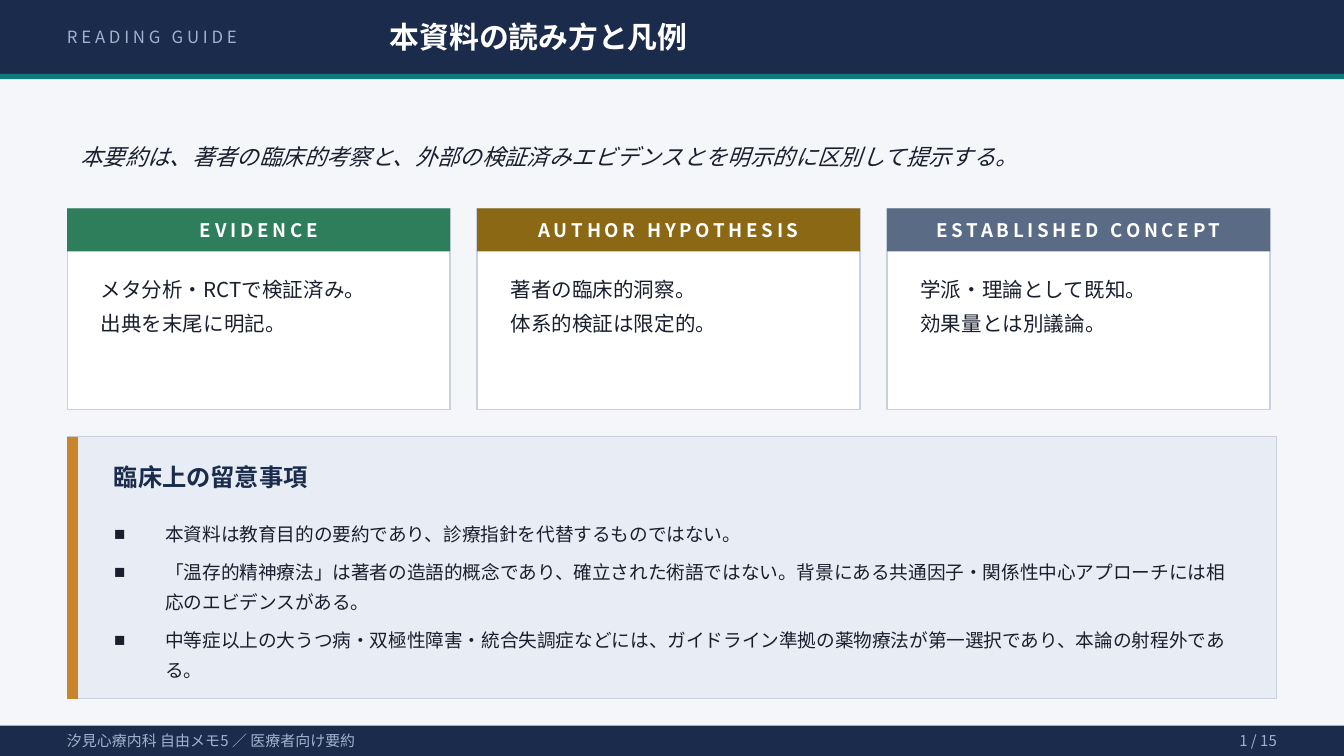
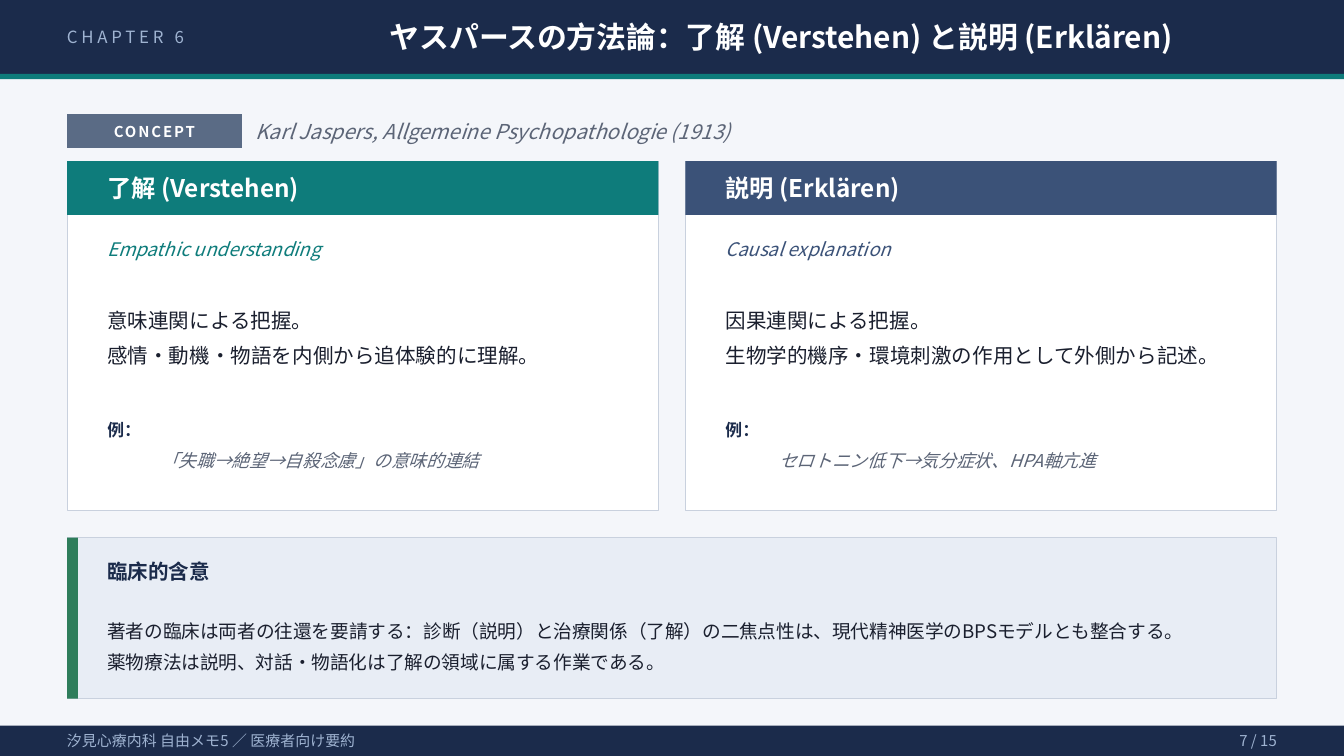
from lxml import etree
from pptx import Presentation
from pptx.dml.color import RGBColor
from pptx.enum import shapes, text
from pptx.oxml import ns
from pptx.util import Pt

FONT = "Noto Sans CJK JP"
COLORS = {
    "page": "F4F6FA", "navy": "1B2B4B", "teal": "0E7C7B", "pale": "9FB3D1",
    "white": "FFFFFF", "ink": "1A1F2E", "muted": "5C6577", "border": "C9D1DE",
    "panel": "E8EDF5", "green": "2E7D5B", "gold": "8B6914", "slate": "5A6B85",
    "amber": "C8852C", "indigo": "3B5278",
}
PAGE_WIDTH, PAGE_HEIGHT = 720, 405
MARGIN, GAP = 36, 14.4
CONTENT_WIDTH = PAGE_WIDTH - 2 * MARGIN
FOOTER = "汐見心療内科 自由メモ5 ／ 医療者向け要約"
PAGE_COUNT = 15
LEFT, CENTER, RIGHT = text.PP_ALIGN.LEFT, text.PP_ALIGN.CENTER, text.PP_ALIGN.RIGHT
TOP, MIDDLE = text.MSO_ANCHOR.TOP, text.MSO_ANCHOR.MIDDLE


def rgb(name):
    return RGBColor.from_string(COLORS[name])


def add_bullet(paragraph, indent):
    properties = paragraph._p.get_or_add_pPr()
    properties.set("marL", str(Pt(indent)))
    properties.set("indent", str(-Pt(indent)))
    etree.SubElement(properties, ns.qn("a:buChar")).set("char", "■")


def write(frame, content, size, color, bold=False, italic=False, align=LEFT, anchor=MIDDLE,
          leading=1.0, after=0, tracking=0, inset=(7.2, 3.6), bullet_indent=0):
    frame.text = content
    frame.word_wrap = True
    frame.auto_size = text.MSO_AUTO_SIZE.NONE
    frame.vertical_anchor = anchor
    frame.margin_left = frame.margin_right = Pt(inset[0])
    frame.margin_top = frame.margin_bottom = Pt(inset[1])
    for paragraph in frame.paragraphs:
        if bullet_indent:
            add_bullet(paragraph, bullet_indent)
        paragraph.alignment = align
        paragraph.line_spacing = leading
        paragraph.space_before = Pt(0)
        paragraph.space_after = Pt(after)
        for run in paragraph.runs:
            font = run.font
            font.size, font.bold, font.italic = Pt(size), bold, italic
            font.color.rgb = rgb(color)
            font.name = FONT
            properties = run._r.get_or_add_rPr()
            etree.SubElement(properties, ns.qn("a:ea")).set("typeface", FONT)
            if tracking:
                properties.set("spc", str(tracking * 100))


def add_text(slide, box, content, size, color, **style):
    label = slide.shapes.add_textbox(*map(Pt, box))
    write(label.text_frame, content, size, color, **style)


def add_rect(slide, box, fill, border_width=0):
    rect = slide.shapes.add_shape(shapes.MSO_SHAPE.RECTANGLE, *map(Pt, box))
    rect.shadow.inherit = False
    rect.fill.solid()
    rect.fill.fore_color.rgb = rgb(fill)
    if border_width:
        rect.line.color.rgb = rgb("border")
        rect.line.width = Pt(border_width)
    else:
        rect.line.fill.background()
    return rect


def fill_placeholder(placeholder, box, content, size, color, **style):
    placeholder.left, placeholder.top, placeholder.width, placeholder.height = map(Pt, box)
    placeholder.element.getparent().append(placeholder.element)
    write(placeholder.text_frame, content, size, color, **style)


def add_frame(slide, section, title, page):
    add_rect(slide, (0, 0, PAGE_WIDTH, 39.6), "navy")
    add_rect(slide, (0, 39.6, PAGE_WIDTH, 2.88), "teal")
    add_text(slide, (28.8, 3.6, 180, 32.4), section, 9, "pale", tracking=2)
    fill_placeholder(slide.shapes.title, (208.8, 3.6, 496.8, 32.4), title, 16, "white",
                     bold=True, inset=(0, 0))
    height = 16.2
    top = PAGE_HEIGHT - height
    add_rect(slide, (0, top, PAGE_WIDTH, height), "navy")
    add_text(slide, (28.8, top, 432, height), FOOTER, 8, "pale")
    add_text(slide, (633.6, top, 57.6, height), f"{page} / {PAGE_COUNT}", 8, "pale", align=RIGHT)


def add_legend_card(slide, box, category, color, meaning):
    left, top, width, height = box
    add_rect(slide, box, "white", 0.75)
    header = add_rect(slide, (left, top, width, 23.04), color)
    write(header.text_frame, category, 10, "white", bold=True, align=CENTER, tracking=2)
    add_text(slide, (left + 10.8, top + 28.8, width - 21.6, height - 32.4), meaning, 11, "ink",
             anchor=TOP, leading=1.35)


def add_comparison_card(slide, box, term, color, gloss, meaning, example):
    left, top, width, _ = box
    inner_left, inner_width = left + 14.4, width - 28.8
    add_rect(slide, box, "white", 0.5)
    header = add_rect(slide, (left, top, width, 28.8), color)
    write(header.text_frame, term, 13, "white", bold=True, inset=(21.6, 3.6))
    add_text(slide, (inner_left, top + 36, inner_width, 21.6), gloss, 10, color, italic=True)
    add_text(slide, (inner_left, top + 57.6, inner_width, 68.4), meaning, 11, "ink", leading=1.4)
    add_text(slide, (inner_left, top + 133.2, 36, 21.6), "例：", 9, "navy", bold=True)
    add_text(slide, (inner_left + 28.8, top + 133.2, inner_width - 28.8, 50.4), example, 9.5,
             "muted", italic=True, leading=1.3)


def add_panel(slide, box, accent, heading, size, indent, heading_height):
    left, top, _, height = box
    add_rect(slide, box, "panel", 0.5)
    add_rect(slide, (left, top, 5.76, height), accent)
    add_text(slide, (left + indent, top + 7.2, 612, heading_height), heading, size, "navy",
             bold=True)


def build_reading_guide(prs):
    slide = prs.slides.add_slide(prs.slide_layouts[1])
    notes = slide.placeholders[1]
    add_frame(slide, "READING GUIDE", "本資料の読み方と凡例", 1)
    add_text(slide, (MARGIN, 61.2, CONTENT_WIDTH, 39.6),
             "本要約は、著者の臨床的考察と、外部の検証済みエビデンスとを明示的に区別して提示する。",
             12, "ink", italic=True, leading=1.4)
    legend = [
        ("EVIDENCE", "green", "メタ分析・RCTで検証済み。\n出典を末尾に明記。"),
        ("AUTHOR HYPOTHESIS", "gold", "著者の臨床的洞察。\n体系的検証は限定的。"),
        ("ESTABLISHED CONCEPT", "slate", "学派・理論として既知。\n効果量とは別議論。"),
    ]
    card_width = 205.2
    for index, entry in enumerate(legend):
        left = MARGIN + index * (card_width + GAP)
        add_legend_card(slide, (left, 111.6, card_width, 108), *entry)
    add_panel(slide, (MARGIN, 234, CONTENT_WIDTH, 140.4), "amber", "臨床上の留意事項", 13, 18, 28.8)
    cautions = [
        "本資料は教育目的の要約であり、診療指針を代替するものではない。",
        "「温存的精神療法」は著者の造語的概念であり、確立された術語ではない。"
        "背景にある共通因子・関係性中心アプローチには相応のエビデンスがある。",
        "中等症以上の大うつ病・双極性障害・統合失調症などには、"
        "ガイドライン準拠の薬物療法が第一選択であり、本論の射程外である。",
    ]
    fill_placeholder(notes, (MARGIN + 18, 270, 615.6, 100.8), "\n".join(cautions), 10, "ink",
                     leading=1.35, after=4, bullet_indent=27.36)


def build_jaspers(prs):
    slide = prs.slides.add_slide(prs.slide_layouts[5])
    add_frame(slide, "CHAPTER 6", "ヤスパースの方法論：了解 (Verstehen) と説明 (Erklären)", 7)
    tag = add_rect(slide, (MARGIN, 61.2, 93.6, 18), "slate")
    write(tag.text_frame, "CONCEPT", 8, "white", bold=True, align=CENTER, tracking=1)
    add_text(slide, (136.8, 61.2, 504, 18), "Karl Jaspers, Allgemeine Psychopathologie (1913)",
             11, "muted", italic=True, inset=(0, 0))
    methods = [
        ("了解 (Verstehen)", "teal", "Empathic understanding",
         "意味連関による把握。\n感情・動機・物語を内側から追体験的に理解。",
         "「失職→絶望→自殺念慮」の意味的連結"),
        ("説明 (Erklären)", "indigo", "Causal explanation",
         "因果連関による把握。\n生物学的機序・環境刺激の作用として外側から記述。",
         "セロトニン低下→気分症状、HPA軸亢進"),
    ]
    card_width = (CONTENT_WIDTH - GAP) / 2
    for index, method in enumerate(methods):
        left = MARGIN + index * (card_width + GAP)
        add_comparison_card(slide, (left, 86.4, card_width, 187.2), *method)
    add_panel(slide, (MARGIN, 288, CONTENT_WIDTH, 86.4), "green", "臨床的含意", 11, 14.4, 21.6)
    add_text(slide, (MARGIN + 14.4, 316.8, 612, 54),
             "著者の臨床は両者の往還を要請する：診断（説明）と治療関係（了解）の二焦点性は、"
             "現代精神医学のBPSモデルとも整合する。\n"
             "薬物療法は説明、対話・物語化は了解の領域に属する作業である。",
             10, "ink", leading=1.4)


def main():
    prs = Presentation()
    prs.slide_width, prs.slide_height = Pt(PAGE_WIDTH), Pt(PAGE_HEIGHT)
    background = prs.slide_master.background.fill
    background.solid()
    background.fore_color.rgb = rgb("page")
    build_reading_guide(prs)
    build_jaspers(prs)
    prs.save("out.pptx")


if __name__ == "__main__":
    main()
